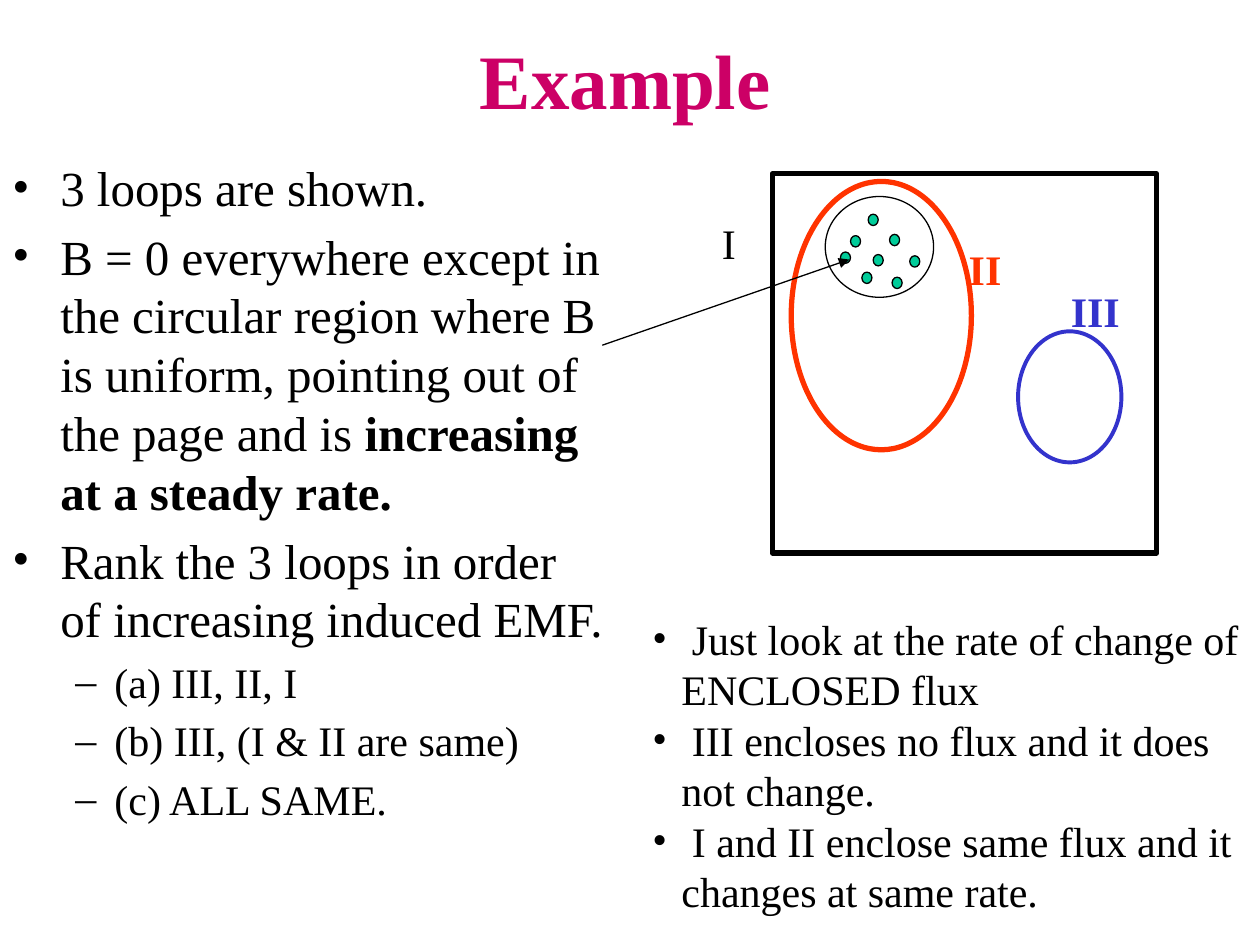
import pptx
import pptx.dml.color
import pptx.enum.shapes
import pptx.enum.text
import pptx.oxml.ns
import pptx.util
from lxml import etree

Inches = pptx.util.Inches
Pt = pptx.util.Pt
SHAPES = pptx.enum.shapes.MSO_SHAPE
ALIGN = pptx.enum.text.PP_ALIGN
ANCHOR = pptx.enum.text.MSO_ANCHOR
BLACK, MAGENTA, RED, BLUE, GREEN = "000000", "CC0066", "FF3300", "3333CC", "00CC99"


def colour(value):
    return pptx.dml.color.RGBColor.from_string(value)


def add_child(parent, tag, **attributes):
    return etree.SubElement(parent, pptx.oxml.ns.qn(tag), **attributes)


def apply(target, values):
    for name, value in values.items():
        setattr(target, name, value)


class SlideBuilder:
    font = "Times New Roman"

    def __init__(self, deck):
        self.page = deck.slides.add_slide(deck.slide_layouts[6])

    def text(self, left, top, width, height, wrap=True, anchor=ANCHOR.TOP):
        box = self.page.shapes.add_textbox(
            Inches(left), Inches(top), Inches(width), Inches(height))
        apply(box.text_frame, {"word_wrap": wrap, "vertical_anchor": anchor})
        return box.text_frame

    def paragraph(self, frame, spans, size, ink=BLACK, align=ALIGN.LEFT,
                  bullet=None, margin=0, hanging=0, before=0):
        first = not frame.paragraphs[0].runs
        para = frame.paragraphs[0] if first else frame.add_paragraph()
        apply(para, {"alignment": align, "space_before": Pt(0 if first else before)})
        if bullet:
            properties = para._p.get_or_add_pPr()
            properties.set("marL", str(Inches(margin)))
            properties.set("indent", str(-Inches(hanging)))
            add_child(properties, "a:buFont", typeface=self.font)
            add_child(properties, "a:buChar", char=bullet)
        for words, bold in spans:
            span = para.add_run()
            span.text = words
            apply(span.font, {"name": self.font, "size": Pt(size), "bold": bold})
            span.font.color.rgb = colour(ink)

    def label(self, words, left, top, width, ink, bold):
        frame = self.text(left, top, width, 0.5, wrap=False)
        self.paragraph(frame, [(words, bold)], 24, ink)

    def shape(self, kind, left, top, width, height, ink=BLACK, weight=0.75, fill=None):
        shape = self.page.shapes.add_shape(
            kind, Inches(left), Inches(top), Inches(width), Inches(height))
        shape.shadow.inherit = False
        if fill:
            shape.fill.solid()
            shape.fill.fore_color.rgb = colour(fill)
        else:
            shape.fill.background()
        shape.line.color.rgb = colour(ink)
        shape.line.width = Pt(weight)

    def arrow(self, start, end, ink=BLACK, weight=0.75):
        arrow = self.page.shapes.add_connector(
            pptx.enum.shapes.MSO_CONNECTOR.STRAIGHT, *map(Inches, start + end))
        arrow.line.color.rgb = colour(ink)
        arrow.line.width = Pt(weight)
        add_child(arrow.line._get_or_add_ln(), "a:tailEnd", type="triangle")
        add_child(arrow._element.spPr, "a:effectLst")


def main():
    deck = pptx.Presentation()
    apply(deck, {"slide_width": Inches(10), "slide_height": Inches(7.5)})
    slide = SlideBuilder(deck)

    title = slide.text(0.79, 0, 8.5, 1.25, anchor=ANCHOR.MIDDLE)
    slide.paragraph(title, [("Example ", True)], 44, MAGENTA, ALIGN.CENTER)

    question = slide.text(0, 1.2, 4.92, 5.94)
    statements = [
        [("3 loops are shown.", False)],
        [("B = 0 everywhere except in the circular region where B is uniform, "
          "pointing out of the page and is ", False),
         ("increasing at a steady rate.", True)],
        [("Rank the 3 loops in order of increasing induced EMF.", False)],
    ]
    for spans in statements:
        slide.paragraph(question, spans, 28, bullet="•",
                        margin=0.38, hanging=0.38, before=5.6)
    for choice in ("(a) III, II, I", "(b) III, (I & II are same)", "(c) ALL SAME."):
        slide.paragraph(question, [(choice, False)], 24, bullet="–",
                        margin=0.81, hanging=0.31, before=4.8)

    slide.shape(SHAPES.RECTANGLE, 6.13, 1.38, 3.05, 3.01, weight=3)
    slide.shape(SHAPES.OVAL, 6.55, 1.56, 0.86, 0.8)
    field_dots = [(6.89, 1.7), (7.06, 1.86), (7.22, 2.03), (6.75, 1.87),
                  (6.93, 2.02), (7.08, 2.2), (6.67, 2), (6.84, 2.16)]
    for left, top in field_dots:
        slide.shape(SHAPES.OVAL, left, top, 0.08, 0.09, fill=GREEN)
    slide.label("I", 5.63, 1.68, 0.31, BLACK, False)
    slide.shape(SHAPES.OVAL, 6.28, 1.44, 1.43, 2.13, RED, 3)
    slide.shape(SHAPES.OVAL, 8.08, 2.63, 0.82, 1.04, BLUE, 2.25)
    slide.label("II", 7.59, 1.88, 0.46, RED, True)
    slide.label("III", 8.4, 2.22, 0.59, BLUE, True)

    answer = slide.text(5.08, 4.82, 4.94, 2.5)
    for reason in (" Just look at the rate of change of ENCLOSED flux",
                   " III encloses no flux and it does not change.",
                   " I and II enclose same flux and it changes at same rate."):
        slide.paragraph(answer, [(reason, False)], 24, bullet="•",
                        margin=0.23, hanging=0.23)

    slide.arrow((4.78, 2.74), (6.74, 2.06))
    deck.save("out.pptx")


if __name__ == "__main__":
    main()
